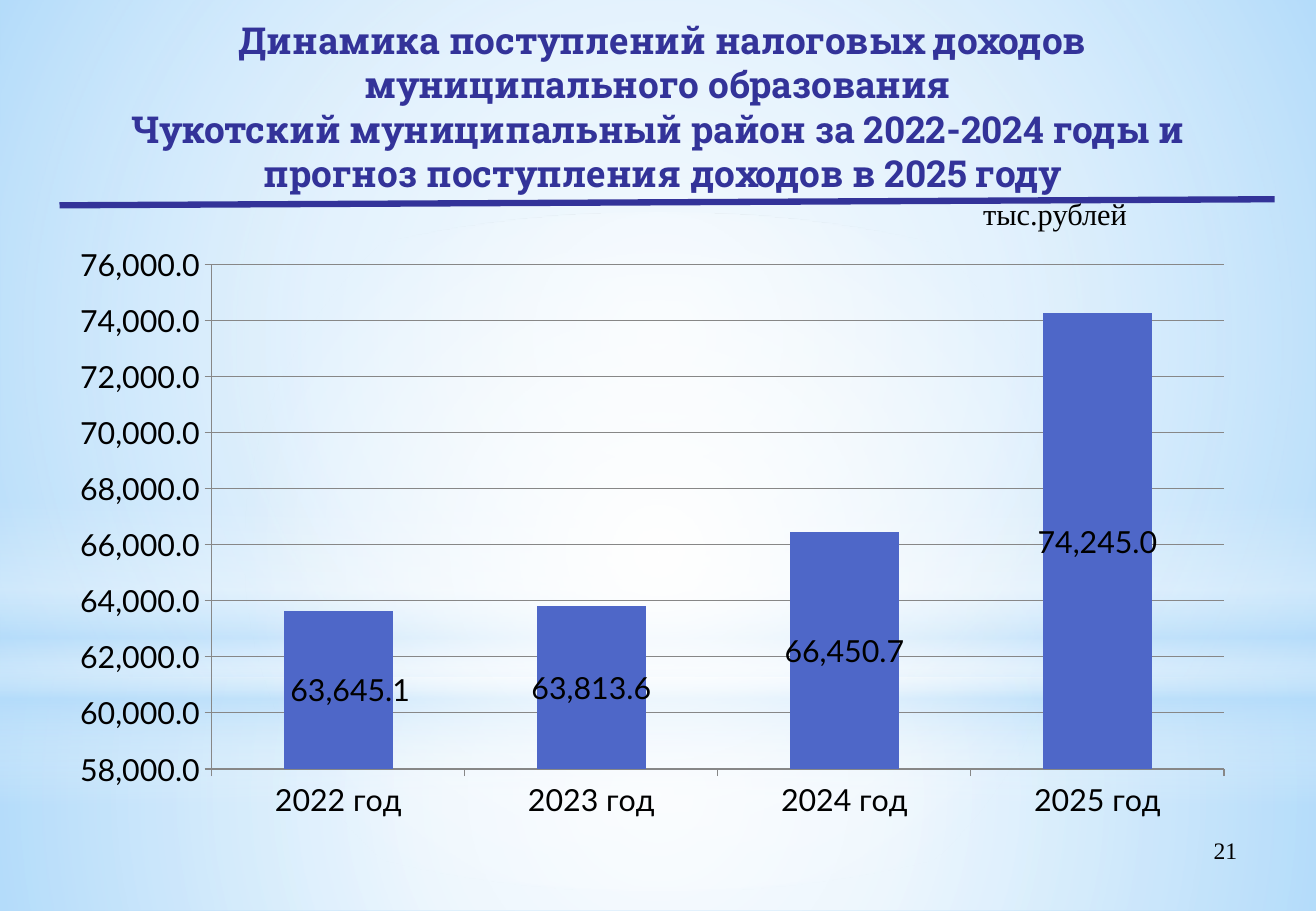
"""Build the slide on tax revenue of the Chukotka municipal district."""
from dataclasses import dataclass

import lxml.etree
import pptx
import pptx.chart.data
import pptx.dml.color
import pptx.enum.chart
import pptx.enum.shapes
import pptx.enum.text
import pptx.oxml
import pptx.oxml.ns
import pptx.util

Pt = pptx.util.Pt
qn = pptx.oxml.ns.qn
Align = pptx.enum.text.PP_ALIGN
Shape = pptx.enum.shapes.MSO_SHAPE


@dataclass(frozen=True)
class Theme:
    sky: str = "B4DCFA"
    white: str = "FFFFFF"
    heading: str = "333399"
    bar: str = "4E67C8"
    axis: str = "878787"
    ink: str = "000000"
    heading_font: str = "Roboto Slab"
    chart_font: str = "Lato"
    note_font: str = "Times New Roman"
    heading_size: float = 22
    body_size: float = 18
    number_size: float = 14


THEME = Theme()
WIDTH, HEIGHT = 780.48, 540
HORIZON = 401.8

TITLE = [
    "Динамика поступлений налоговых доходов муниципального образования ",
    "Чукотский муниципальный район за 2022-2024 годы и ",
    "прогноз поступления доходов в 2025 году",
]
UNIT = "тыс.рублей"
SLIDE_NUMBER = "21"
REVENUE = {"2022 год": 63645.1, "2023 год": 63813.6, "2024 год": 66450.7, "2025 год": 74245.0}
NUMBER_FORMAT = "#,##0.0"
AXIS_RANGE = (58000, 76000, 2000)
PLOT_AREA = {"x": 0.13, "y": 0.05, "w": 0.85, "h": 0.85}
FIRST_LABEL_SHIFT = {"x": 0.01, "y": 0}

RADIAL = '<a:path path="circle"><a:fillToRect l="50000" t="50000" r="50000" b="50000"/></a:path>'
VERTICAL = '<a:lin ang="5400000" scaled="0"/>'
BACKDROP = [
    (Shape.RECTANGLE, (0, HORIZON, WIDTH, HEIGHT - HORIZON), RADIAL,
     [(0, THEME.white, 91), (37, THEME.white, 76), (100, THEME.sky, 79)]),
    (Shape.RECTANGLE, (0, 0, WIDTH, HORIZON), RADIAL,
     [(0, THEME.white, 89), (48, THEME.white, 62), (100, THEME.sky, 79)]),
    (Shape.RECTANGLE, (0, 296.6, WIDTH, 180), VERTICAL,
     [(0, THEME.white, 0), (29, THEME.white, 30), (45, THEME.sky, 40),
      (55, THEME.white, 26), (65, THEME.sky, 60), (100, THEME.white, 0)]),
    (Shape.OVAL, (0, 126, WIDTH, HORIZON), RADIAL,
     [(0, THEME.white, 100), (56, THEME.white, 0)]),
]


def rgb(code):
    """Return a colour object for a hex code."""
    return pptx.dml.color.RGBColor.from_string(code)


def points(values):
    """Turn numbers into lengths in points."""
    return [Pt(value) for value in values]


def style_font(font, name, size, color, bold=False):
    """Set the look of a font."""
    font.name, font.size, font.bold = name, Pt(size), bold
    font.color.rgb = rgb(color)


def write_lines(frame, lines, align, *look):
    """Write one paragraph per line in one style."""
    for index, line in enumerate(lines):
        paragraph = frame.add_paragraph() if index else frame.paragraphs[0]
        paragraph.alignment = align
        paragraph.line_spacing = 1.0
        run = paragraph.add_run()
        run.text = line
        style_font(run.font, *look)


def add_backdrop(slide):
    """Draw the translucent gradient layers."""
    slide.background.fill.solid()
    slide.background.fill.fore_color.rgb = rgb(THEME.sky)
    for kind, box, direction, stops in BACKDROP:
        shape = slide.shapes.add_shape(kind, *points(box))
        shape.shadow.inherit = False
        shape.line.fill.background()
        shape.fill.background()
        colors = "".join(
            f'<a:gs pos="{position * 1000}"><a:srgbClr val="{color}">'
            f'<a:alpha val="{opacity * 1000}"/></a:srgbClr></a:gs>'
            for position, color, opacity in stops)
        gradient = pptx.oxml.parse_xml(
            f'<a:gradFill {pptx.oxml.ns.nsdecls("a")} rotWithShape="1">'
            f'<a:gsLst>{colors}</a:gsLst>{direction}</a:gradFill>')
        properties = shape.element.find(qn("p:spPr"))
        properties.replace(properties.find(qn("a:noFill")), gradient)


def add_title(slide):
    """Fill the title and bring it in front of the backdrop."""
    title = slide.shapes.title
    title.left, title.top, title.width, title.height = points((40.3, 13.7, 704.9, 98.6))
    frame = title.text_frame
    frame.auto_size = pptx.enum.text.MSO_AUTO_SIZE.NONE
    frame.word_wrap = True
    frame.vertical_anchor = pptx.enum.text.MSO_ANCHOR.MIDDLE
    write_lines(frame, TITLE, Align.CENTER, THEME.heading_font, THEME.heading_size,
                THEME.heading, True)
    title.element.getparent().append(title.element)


def add_note(slide, box, text, align, size, wrap):
    """Add a small line of text."""
    frame = slide.shapes.add_textbox(*points(box)).text_frame
    frame.word_wrap = wrap
    write_lines(frame, [text], align, THEME.note_font, size, THEME.ink)


def add_rule(slide):
    """Draw the line under the title."""
    rule = slide.shapes.add_connector(
        pptx.enum.shapes.MSO_CONNECTOR.STRAIGHT, *points((35.3, 121.7, 756, 118.1)))
    rule.line.color.rgb = rgb(THEME.heading)
    rule.line.width = Pt(3.75)
    lxml.etree.SubElement(rule.element.find(qn("p:spPr")), qn("a:effectLst"))


def manual_layout(values, inner=False):
    """Return a chart layout element."""
    modes = '<c:layoutTarget val="inner"/><c:xMode val="edge"/><c:yMode val="edge"/>' if inner else ""
    sizes = "".join(f'<c:{key} val="{value}"/>' for key, value in values.items())
    return pptx.oxml.parse_xml(
        f'<c:layout {pptx.oxml.ns.nsdecls("c")}>'
        f'<c:manualLayout>{modes}{sizes}</c:manualLayout></c:layout>')


def add_revenue_chart(slide):
    """Add the column chart of revenue by year."""
    data = pptx.chart.data.CategoryChartData(number_format=NUMBER_FORMAT)
    data.categories = list(REVENUE)
    data.add_series("Series 1", list(REVENUE.values()))
    chart = slide.shapes.add_chart(
        pptx.enum.chart.XL_CHART_TYPE.COLUMN_STACKED,
        *points((33.8, 139, 706.3, 352.1)), data).chart
    look = (THEME.chart_font, THEME.body_size, THEME.ink)
    style_font(chart.font, *look)
    chart.has_legend = chart.has_title = False

    plot = chart.plots[0]
    plot.gap_width, plot.overlap, plot.vary_by_categories = 133, 100, False
    series = plot.series[0]
    series.format.fill.solid()
    series.format.fill.fore_color.rgb = rgb(THEME.bar)

    value_axis = chart.value_axis
    value_axis.minimum_scale, value_axis.maximum_scale, value_axis.major_unit = AXIS_RANGE
    value_axis.has_major_gridlines = True
    value_axis.tick_labels.number_format = NUMBER_FORMAT
    value_axis.tick_labels.number_format_is_linked = False
    for axis in (value_axis, chart.category_axis):
        axis.major_tick_mark = pptx.enum.chart.XL_TICK_MARK.OUTSIDE
    for part in (value_axis, chart.category_axis, value_axis.major_gridlines):
        part.format.line.color.rgb = rgb(THEME.axis)
        part.format.line.width = Pt(0.75)

    labels = series.data_labels
    labels.show_value = True
    labels.number_format = NUMBER_FORMAT
    labels.number_format_is_linked = False
    style_font(labels.font, *look)
    style_font(series.points[0].data_label.font, *look)
    first_label = chart.element.xpath(".//c:dLbl/c:idx")[0]
    first_label.addnext(manual_layout(FIRST_LABEL_SHIFT))

    plot_area = chart.element.xpath(".//c:plotArea")[0]
    for layout in plot_area.findall(qn("c:layout")):
        plot_area.remove(layout)
    plot_area.insert(0, manual_layout(PLOT_AREA, inner=True))


def main():
    """Assemble and save the presentation."""
    presentation = pptx.Presentation()
    presentation.slide_width = Pt(WIDTH)
    presentation.slide_height = Pt(HEIGHT)
    slide = presentation.slides.add_slide(presentation.slide_layouts[5])
    add_backdrop(slide)
    add_note(slide, (558.7, 491.8, 182.2, 37.4), SLIDE_NUMBER, Align.RIGHT, THEME.number_size, True)
    add_title(slide)
    add_rule(slide)
    add_revenue_chart(slide)
    add_note(slide, (576, 112.3, 100.8, 28.8), UNIT, Align.LEFT, THEME.body_size, False)
    presentation.save("out.pptx")


if __name__ == "__main__":
    main()
